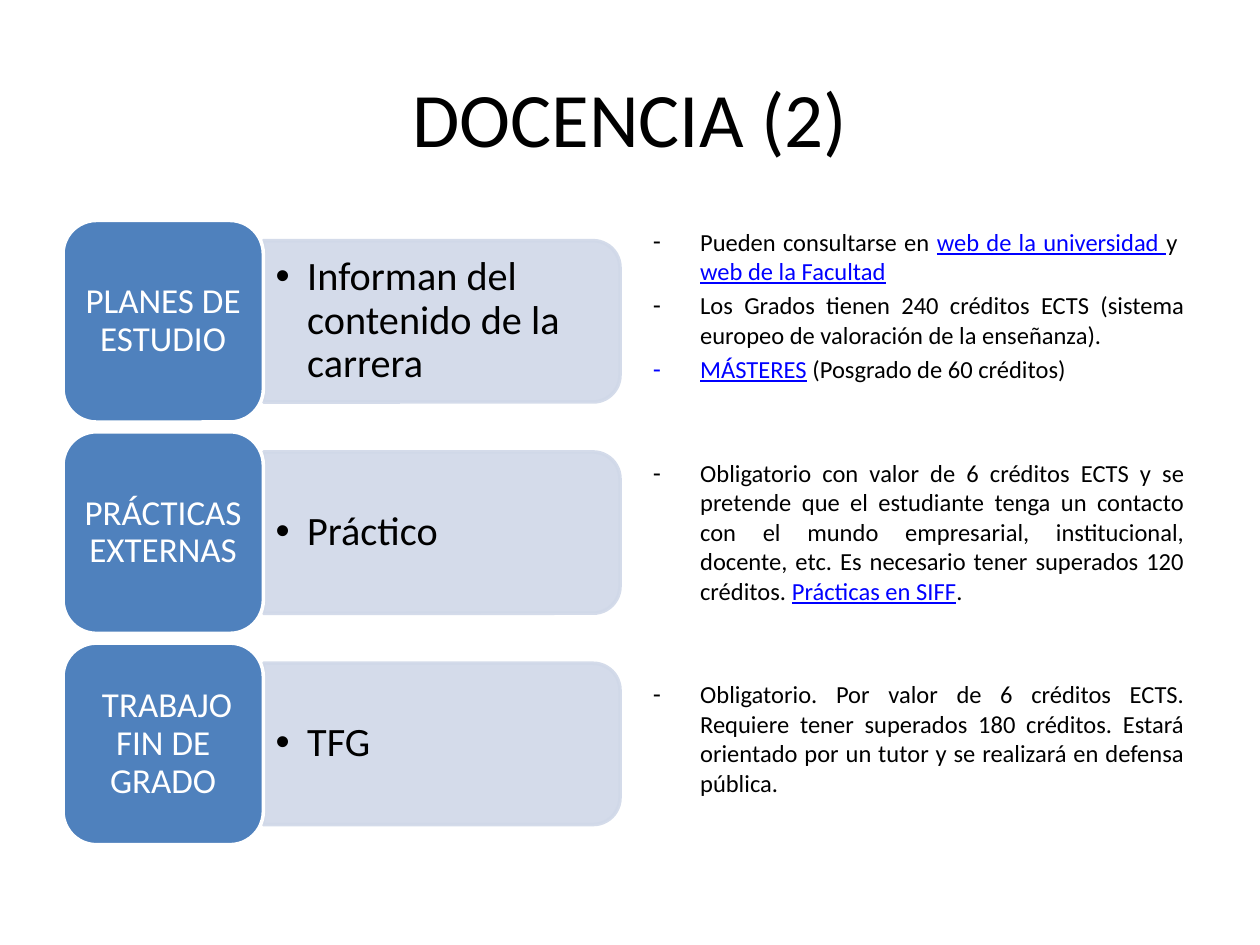
from dataclasses import dataclass
from typing import Any

import lxml.etree
import pptx
import pptx.dml.color
import pptx.enum.shapes
import pptx.enum.text
import pptx.oxml.ns
import pptx.util

Pt = pptx.util.Pt
ALIGN = pptx.enum.text.PP_ALIGN
SHAPES = pptx.enum.shapes.MSO_SHAPE

BLACK, WHITE, LINK = "000000", "FFFFFF", "0000FF"
LABEL_FILL, PANEL_FILL = "4F81BD", "D0D8E8"

FIRST_TOP, ROW_PITCH = 126, 120.75
LABEL_LEFT, LABEL_WIDTH, LABEL_HEIGHT = 36, 114.5, 115.2
PANEL_WIDTH, PANEL_HEIGHT = 203.8, 92.2
LINE_GAP, TOPIC_GAP = 2.8, 42.5


@dataclass
class Topic:
    label: str
    summary: str


@dataclass
class Run:
    text: str
    link: bool = False


@dataclass
class Note:
    runs: list[Run]
    space_before: float = LINE_GAP


TOPICS = [
    Topic("PLANES DE ESTUDIO", "Informan del contenido de la carrera"),
    Topic("PRÁCTICAS EXTERNAS", "Práctico"),
    Topic(" TRABAJO FIN DE GRADO", "TFG"),
]

NOTES = [
    Note([Run("Pueden consultarse en "), Run("web de la universidad ", True),
          Run("y  "), Run("web de la Facultad", True)]),
    Note([Run("Los Grados tienen 240 créditos ECTS (sistema europeo de "
              "valoración de la enseñanza). ")]),
    Note([Run("MÁSTERES", True), Run(" (Posgrado de 60 créditos)")]),
    Note([Run("Obligatorio con valor de 6 créditos ECTS y se pretende que el "
              "estudiante tenga un contacto con el mundo empresarial, "
              "institucional, docente, etc. Es necesario tener superados 120 "
              "créditos. "), Run("Prácticas en SIFF", True), Run(".")], TOPIC_GAP),
    Note([Run("Obligatorio. Por valor de 6 créditos ECTS. Requiere tener "
              "superados 180 créditos. Estará orientado por un tutor y se "
              "realizará en defensa pública.")], TOPIC_GAP),
]


def color(value: str) -> pptx.dml.color.RGBColor:
    return pptx.dml.color.RGBColor.from_string(value)


def set_bullet(paragraph: Any, character: str, indent: float) -> None:
    properties = paragraph._p.get_or_add_pPr()
    properties.set("marL", str(Pt(indent)))
    properties.set("indent", str(-Pt(indent)))
    font = lxml.etree.SubElement(properties, pptx.oxml.ns.qn("a:buFont"))
    font.set("typeface", "Arial")
    bullet = lxml.etree.SubElement(properties, pptx.oxml.ns.qn("a:buChar"))
    bullet.set("char", character)


def write(paragraph: Any, runs: list[Run], *, size: float, ink: str = BLACK,
          align: Any = ALIGN.LEFT, line_spacing: float = 1.0,
          space_before: float = 0, bullet: str = "", indent: float = 0) -> None:
    paragraph.alignment = align
    paragraph.line_spacing = line_spacing
    paragraph.space_before = Pt(space_before)
    if bullet:
        set_bullet(paragraph, bullet, indent)
    for item in runs:
        run = paragraph.add_run()
        run.text = item.text
        run.font.name = "Calibri"
        run.font.size = Pt(size)
        run.font.color.rgb = color(LINK if item.link else ink)
        run.font.underline = item.link


def prepare_frame(shape: Any, anchor: Any, side: float = 7.2, end: float = 3.6) -> Any:
    frame = shape.text_frame
    frame.word_wrap = True
    frame.vertical_anchor = anchor
    frame.margin_left = frame.margin_right = Pt(side)
    frame.margin_top = frame.margin_bottom = Pt(end)
    return frame


def add_text_box(slide: Any, left: float, top: float, width: float, height: float,
                 anchor: Any = pptx.enum.text.MSO_ANCHOR.MIDDLE) -> Any:
    box = slide.shapes.add_textbox(Pt(left), Pt(top), Pt(width), Pt(height))
    return prepare_frame(box, anchor)


def add_block(slide: Any, kind: Any, left: float, top: float, width: float,
              height: float, fill: str, line: str) -> Any:
    shape = slide.shapes.add_shape(kind, Pt(left), Pt(top), Pt(width), Pt(height))
    shape.shadow.inherit = False
    shape.fill.solid()
    shape.fill.fore_color.rgb = color(fill)
    shape.line.color.rgb = color(line)
    shape.line.width = Pt(2)
    return shape


def make_translucent(shape: Any, percent: int) -> None:
    """Set the opacity of both fill and line."""
    for element in shape._element.spPr.iter(pptx.oxml.ns.qn("a:srgbClr")):
        alpha = lxml.etree.SubElement(element, pptx.oxml.ns.qn("a:alpha"))
        alpha.set("val", str(percent * 1000))


def add_topic(slide: Any, topic: Topic, top: float) -> None:
    panel_left = LABEL_LEFT + LABEL_WIDTH
    middle = top + LABEL_HEIGHT / 2
    # The panel is drawn upright and turned about its centre.
    panel = add_block(slide, SHAPES.ROUND_2_SAME_RECTANGLE,
                      panel_left + (PANEL_WIDTH - PANEL_HEIGHT) / 2,
                      middle - PANEL_WIDTH / 2, PANEL_HEIGHT, PANEL_WIDTH,
                      PANEL_FILL, PANEL_FILL)
    panel.rotation = 90
    make_translucent(panel, 90)
    summary = add_text_box(slide, panel_left, middle - 41.5, 198.7, 83)
    write(summary.paragraphs[0], [Run(topic.summary)], size=23,
          line_spacing=0.9, bullet="•", indent=18)

    label = add_block(slide, SHAPES.ROUNDED_RECTANGLE, LABEL_LEFT, top,
                      LABEL_WIDTH, LABEL_HEIGHT, LABEL_FILL, WHITE)
    frame = prepare_frame(label, pptx.enum.text.MSO_ANCHOR.MIDDLE, 6, 3)
    write(frame.paragraphs[0], [Run(topic.label)], size=20, ink=WHITE,
          align=ALIGN.CENTER, line_spacing=0.9)


def add_notes_column(slide: Any) -> None:
    frame = add_text_box(slide, 366, FIRST_TOP, 318, 382,
                         pptx.enum.text.MSO_ANCHOR.TOP)
    for index, note in enumerate(NOTES):
        paragraph = frame.add_paragraph() if index else frame.paragraphs[0]
        write(paragraph, note.runs, size=14, align=ALIGN.JUSTIFY,
              space_before=note.space_before, bullet="-", indent=27)


def main() -> None:
    presentation = pptx.Presentation()
    presentation.slide_width, presentation.slide_height = Pt(720), Pt(540)
    slide = presentation.slides.add_slide(presentation.slide_layouts[6])
    title = add_text_box(slide, 36, 21.6, 648, 90)
    write(title.paragraphs[0], [Run("DOCENCIA (2)")], size=44, align=ALIGN.CENTER)
    for index, topic in enumerate(TOPICS):
        add_topic(slide, topic, FIRST_TOP + index * ROW_PITCH)
    add_notes_column(slide)
    presentation.save("out.pptx")


if __name__ == "__main__":
    main()
